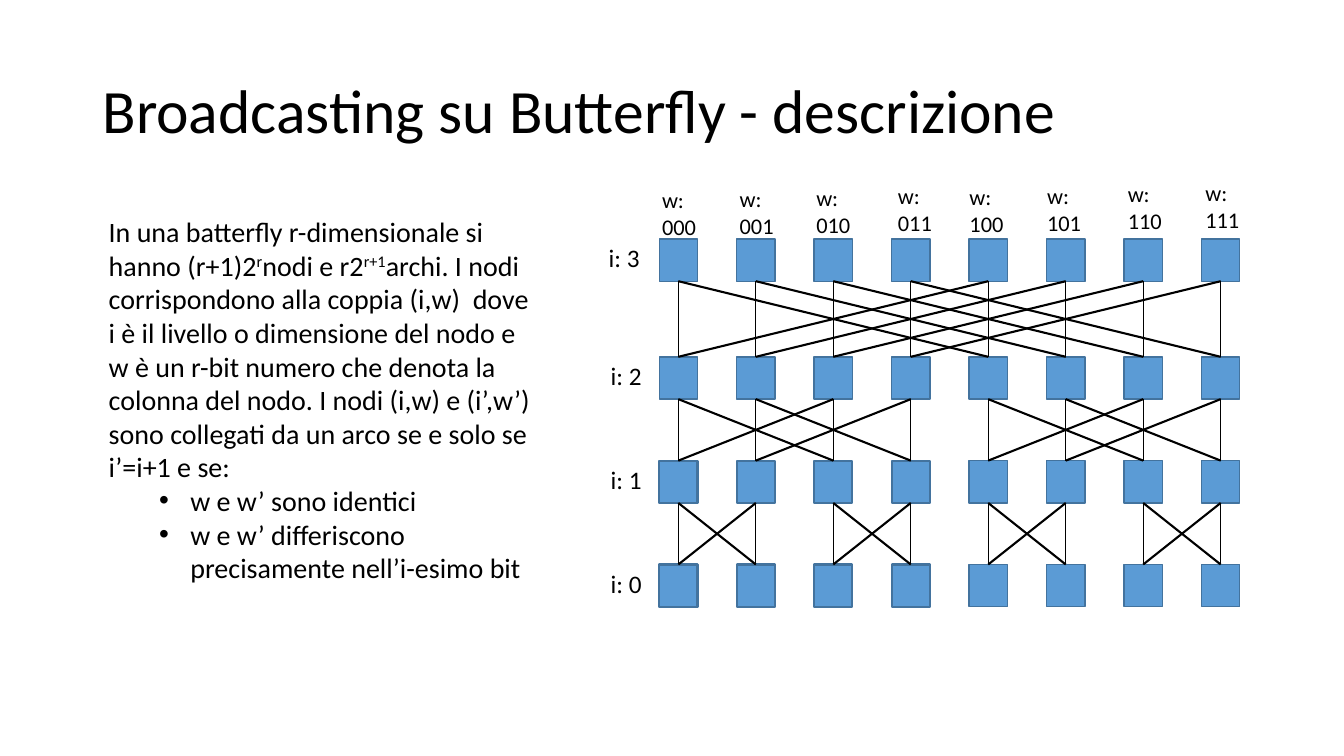
from dataclasses import dataclass
from itertools import product
from lxml.etree import SubElement
from pptx import Presentation
from pptx.dml.color import RGBColor
from pptx.enum.shapes import MSO_CONNECTOR, MSO_SHAPE
from pptx.enum.text import MSO_ANCHOR
from pptx.oxml.ns import qn
from pptx.util import Pt

PX = 9144


@dataclass(frozen=True)
class Theme:
    font: str = "Calibri"
    ink: RGBColor = RGBColor(0x00, 0x00, 0x00)
    node: RGBColor = RGBColor(0x5B, 0x9B, 0xD5)
    border: RGBColor = RGBColor(0x43, 0x73, 0x9E)
    title: int = 44
    body: int = 20
    level: int = 18
    column: int = 16
    thin: float = 0.75
    regular: float = 1
    thick: float = 1.5


THEME = Theme()
TITLE = "Broadcasting su Butterfly - descrizione"
DESCRIPTION = [
    ("In una batterfly r-dimensionale si hanno (r+1)2", False),
    ("r", True),
    ("nodi e r2", False),
    ("r+1", True),
    ("archi. I nodi corrispondono alla coppia (i,w)  dove i è il livello o "
     "dimensione del nodo e w è un r-bit numero che denota la colonna del nodo. "
     "I nodi (i,w) e (i’,w’) sono collegati da un arco se e solo se i’=i+1 e se:", False),
]
CONDITIONS = ["w e w’ sono identici", "w e w’ differiscono precisamente nell’i-esimo bit"]
DIMENSION = 3
COLUMNS = 2 ** DIMENSION
NODE_WIDTH, NODE_HEIGHT = 38, 42
LEVEL_TOPS = [0, 117, 220, 323]
COLUMN_LABELS = [(-7, -57), (70, -58), (146, -59), (227, -61),
                 (298, -60), (375, -61), (455, -63), (532, -64)]


def scaled(*lengths):
    return [round(length * PX) for length in lengths]


def apply(target, values):
    for name, value in values.items():
        setattr(target, name, value)


def add_span(para, text, size, raised=False):
    span = para.add_run()
    span.text = text
    apply(span.font, {"name": THEME.font, "size": Pt(size)})
    span.font.color.rgb = THEME.ink
    if raised:
        span.font._element.set("baseline", "30000")


def add_text_box(page, box, anchor=MSO_ANCHOR.TOP):
    frame = page.shapes.add_textbox(*scaled(*box)).text_frame
    apply(frame, {"word_wrap": True, "vertical_anchor": anchor})
    return frame


def add_label(page, box, text, size):
    add_span(add_text_box(page, box).paragraphs[0], text, size)


def add_title(page, box):
    para = add_text_box(page, box, MSO_ANCHOR.MIDDLE).paragraphs[0]
    para.line_spacing = 0.9
    add_span(para, TITLE, THEME.title)


def add_description(page, box):
    frame = add_text_box(page, box)
    for text, raised in DESCRIPTION:
        add_span(frame.paragraphs[0], text, THEME.body, raised)
    for condition in CONDITIONS:
        para = frame.add_paragraph()
        para.level = 1
        margin, hanging = scaled(81, -31)
        properties = para._p.get_or_add_pPr()
        properties.set("marL", str(margin))
        properties.set("indent", str(hanging))
        SubElement(properties, qn("a:buFont"), typeface="Arial")
        SubElement(properties, qn("a:buChar"), char="•")
        add_span(para, condition, THEME.body)


def add_node(page, box, weight):
    node = page.shapes.add_shape(MSO_SHAPE.RECTANGLE, *scaled(*box))
    node.shadow.inherit = False
    node.fill.solid()
    node.fill.fore_color.rgb = THEME.node
    node.line.color.rgb = THEME.border
    node.line.width = Pt(weight)


def add_edge(page, start, end, weight):
    edge = page.shapes.add_connector(MSO_CONNECTOR.STRAIGHT, *scaled(*start, *end))
    edge.line.color.rgb = THEME.ink
    edge.line.width = Pt(weight)
    SubElement(edge._element.spPr, qn("a:effectLst"))


def add_butterfly(page, box):
    left, top, width, height = box
    step = (width - NODE_WIDTH) / (COLUMNS - 1)
    lefts = [left + column * step for column in range(COLUMNS)]
    centers = [node_left + NODE_WIDTH / 2 for node_left in lefts]
    tops = [top + offset for offset in LEVEL_TOPS]

    for row, column in product(range(len(tops)), range(COLUMNS)):
        heavy = row >= 2 and column < COLUMNS // 2
        add_node(page, (lefts[column], tops[row], NODE_WIDTH, NODE_HEIGHT),
                 THEME.thick if heavy else THEME.regular)

    for row, column in product(range(DIMENSION), range(COLUMNS)):
        partner = column ^ (1 << (DIMENSION - 1 - row))
        start = (centers[column], tops[row] + NODE_HEIGHT)
        for target, weight in ((column, THEME.thin), (partner, THEME.thick)):
            add_edge(page, start, (centers[target], tops[row + 1]), weight)

    for row, level_top in enumerate(tops):
        label_left = left - (60 if row == 0 else 58)
        add_label(page, (label_left, level_top - 1, 56, 46),
                  f"i: {DIMENSION - row}", THEME.level)
    for column, (across, down) in enumerate(COLUMN_LABELS):
        add_label(page, (left + across, top + down, 56, 46),
                  f"w: {column:03b}", THEME.column)


def main():
    deck = Presentation()
    slide_width, slide_height = scaled(1333.33, 750)
    apply(deck, {"slide_width": slide_width, "slide_height": slide_height})
    page = deck.slides.add_slide(deck.slide_layouts[6])
    add_title(page, (92, 40, 1150, 145))
    add_description(page, (98, 208, 442, 411))
    add_butterfly(page, (654, 237, 576, 365))
    deck.save("out.pptx")


if __name__ == "__main__":
    main()
